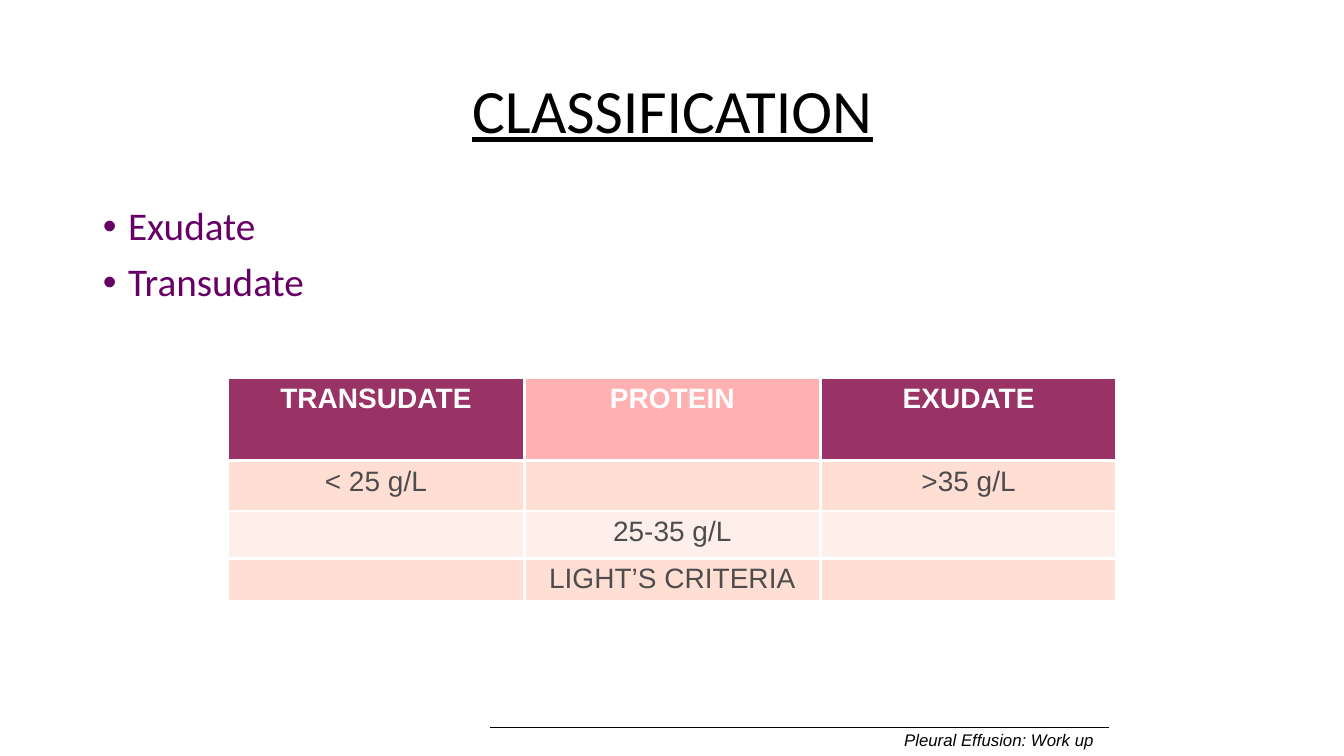
from lxml.etree import SubElement as Sub
from pptx import Presentation
from pptx.dml.color import RGBColor as Rgb
from pptx.enum.shapes import MSO_CONNECTOR as Link
from pptx.enum.text import MSO_ANCHOR as Anchor, MSO_AUTO_SIZE as Fit, PP_ALIGN as Align
from pptx.oxml.ns import qn
from pptx.util import Inches, Pt

theme = {
    "title": {"name": "Calibri", "size": Pt(44), "underline": True, "color": "000000"},
    "list": {"name": "Calibri", "size": Pt(28), "color": "660066"},
    "head": {"name": "Arial", "size": Pt(20), "bold": True, "color": "FFFFFF"},
    "cell": {"name": "Arial", "size": Pt(20), "bold": False, "color": "4D4D4D"},
    "foot": {"name": "Arial", "size": Pt(12), "italic": True, "color": "000000"},
    "fills": [
        ["993366", "FFB0B0", "993366"],
        ["FFDED3"] * 3,
        ["FFEFEA"] * 3,
        ["FFDED3"] * 3,
    ],
    "edge": "FFFFFF",
    "rule": "000000",
}

deck = Presentation()
deck.slide_width, deck.slide_height = Inches(13.33), Inches(7.5)
col, row = deck.slide_width / 100, deck.slide_height / 100
slide = deck.slides.add_slide(deck.slide_layouts[1])


def box(x, y, w, h):
    return int(x * col), int(y * row), int(w * col), int(h * row)


def style(para, text, look, **form):
    run = para.add_run()
    run.text = text
    for key, val in theme[look].items():
        if key == "color":
            run.font.color.rgb = Rgb.from_string(val)
        else:
            setattr(run.font, key, val)
    for key, val in form.items():
        setattr(para, key, val)


title, body = slide.placeholders
spots = [(title, box(6.9, 5.33, 86.25, 19.33)), (body, box(6.9, 26.67, 86.25, 63.47))]
for shape, spot in spots:
    for key, val in zip(("left", "top", "width", "height"), spot):
        setattr(shape, key, val)
    shape.text_frame.auto_size = Fit.NONE

title.text_frame.vertical_anchor = Anchor.MIDDLE
style(title.text_frame.paragraphs[0], "CLASSIFICATION", "title",
      alignment=Align.CENTER, line_spacing=0.9)

items = ["Exudate", "Transudate"]
for i, item in enumerate(items):
    para = body.text_frame.add_paragraph() if i else body.text_frame.paragraphs[0]
    style(para, item, "list", line_spacing=0.9, space_before=Pt(10))
    prop = para._p.get_or_add_pPr()
    prop.set("marL", str(Inches(0.25)))
    prop.set("indent", str(-Inches(0.25)))
    Sub(prop, qn("a:buFont"), typeface="Arial")
    Sub(prop, qn("a:buChar"), char="•")

words = [
    ["TRANSUDATE", "PROTEIN", "EXUDATE"],
    ["< 25 g/L", "", ">35 g/L"],
    ["", "25-35 g/L", ""],
    ["", "LIGHT’S CRITERIA", ""],
]
highs = [10.93, 6.67, 6.27, 5.73]
table = slide.shapes.add_table(4, 3, *box(16.95, 50, 66.15, sum(highs))).table
for r, line in enumerate(words):
    table.rows[r].height = int(highs[r] * row)
    for c, text in enumerate(line):
        cell = table.cell(r, c)
        prop = cell._tc.get_or_add_tcPr()
        for side in ("L", "R", "T", "B"):
            edge = Sub(prop, qn(f"a:ln{side}"), w=str(Pt(2.25)))
            Sub(Sub(edge, qn("a:solidFill")), qn("a:srgbClr"), val=theme["edge"])
        cell.fill.solid()
        cell.fill.fore_color.rgb = Rgb.from_string(theme["fills"][r][c])
        if text:
            style(cell.text_frame.paragraphs[0], text, "cell" if r else "head",
                  alignment=Align.CENTER)

left, top, wide, _ = box(36.46, 96.27, 46.06, 0)
rule = slide.shapes.add_connector(Link.STRAIGHT, left, top, left + wide, top)
rule.line.color.rgb = Rgb.from_string(theme["rule"])
rule.line.width = Pt(0.75)
Sub(rule._element.spPr, qn("a:effectLst"))

foot = slide.shapes.add_textbox(*box(66.54, 95.87, 16.05, 4)).text_frame
foot.word_wrap = False
foot.auto_size = Fit.SHAPE_TO_FIT_TEXT
style(foot.paragraphs[0], "Pleural Effusion: Work up", "foot")

deck.save("out.pptx")
